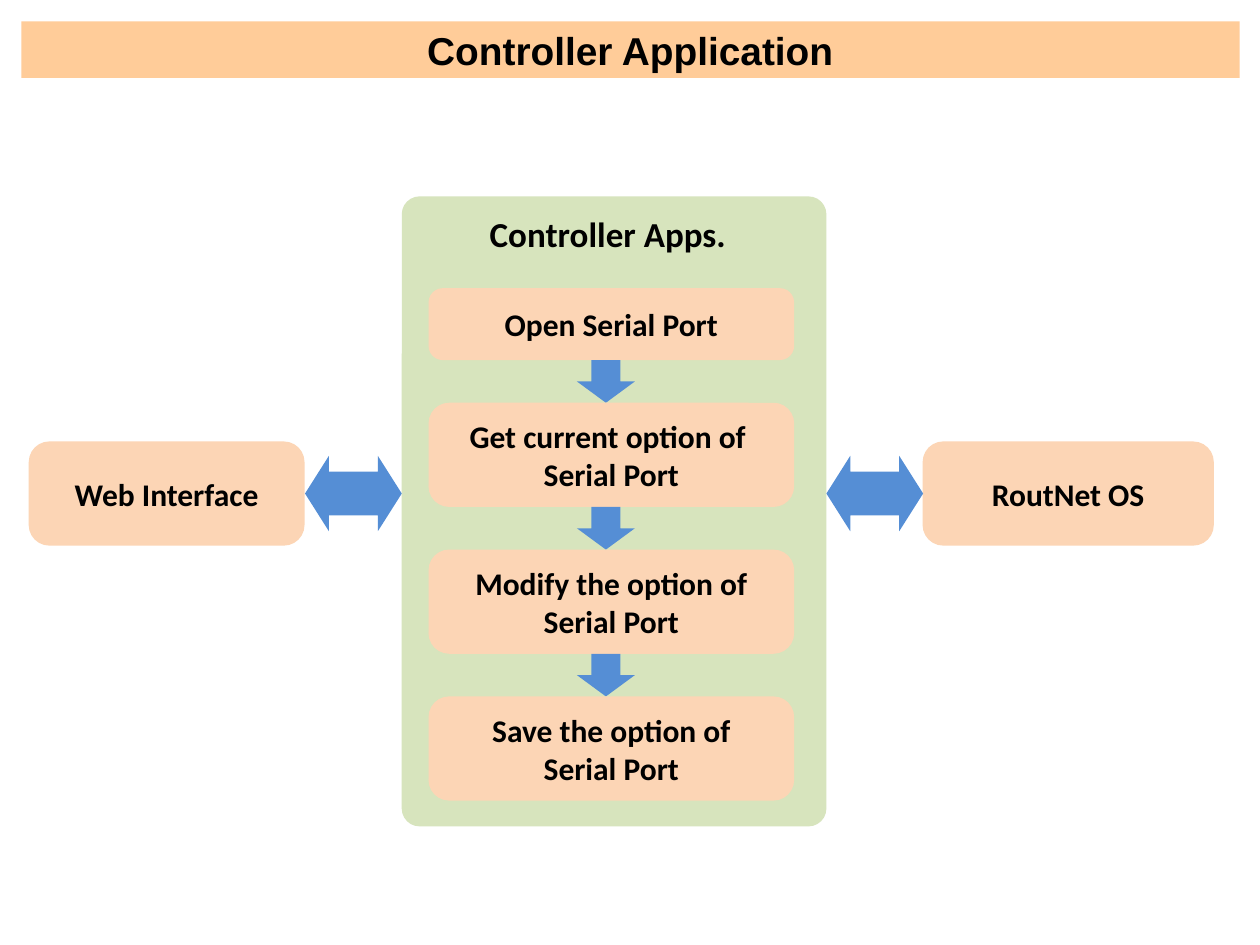
from dataclasses import dataclass

from pptx import Presentation
from pptx.dml.color import RGBColor
from pptx.enum.shapes import MSO_SHAPE as Shape
from pptx.enum.text import MSO_ANCHOR as Anchor, PP_ALIGN as Align
from pptx.util import Cm, Pt


@dataclass(frozen=True)
class Theme:
    banner: str = "FFCC99"
    panel: str = "D7E4BD"
    box: str = "FCD5B5"
    arrow: str = "558ED5"
    text: str = "000000"
    title_font: str = "Arial"
    body_font: str = "Calibri"
    title_size: float = 22.2
    heading_size: float = 20
    body_size: float = 18


@dataclass(frozen=True)
class Rect:
    """Position and size in centimetres."""
    x: float
    y: float
    w: float
    h: float

    @property
    def lengths(self) -> tuple:
        return Cm(self.x), Cm(self.y), Cm(self.w), Cm(self.h)


@dataclass(frozen=True)
class Step:
    lines: tuple[str, ...]
    height: float


THEME = Theme()
BOX_ROUNDING = 0.198
BOX_H = 2.1
PANEL = Rect(8.1, 3.96, 8.56, 12.7)

STEP_X, STEP_TOP, STEP_W, STEP_GAP = 8.64, 5.81, 7.37, 0.86
STEPS = (
    Step(("Open Serial Port",), 1.45),
    Step(("Get current option of ", "Serial Port"), BOX_H),
    Step(("Modify the option of", "Serial Port"), BOX_H),
    Step(("Save the option of", "Serial Port"), BOX_H),
)
DOWN_X, DOWN_W = 11.63, 1.17

SIDE_Y = 8.9
SIDE_BOXES = (
    ("Web Interface", Rect(0.58, SIDE_Y, 5.56, BOX_H)),
    ("RoutNet OS", Rect(18.6, SIDE_Y, 5.87, BOX_H)),
)
LINK_W, LINK_H = 1.95, 1.52


def add_block(s, kind: Shape, rect: Rect, color: str, *adjustments: float):
    """Add a flat, borderless preset shape."""
    sp = s.shapes.add_shape(kind, *rect.lengths)
    sp.shadow.inherit = False
    sp.fill.solid()
    sp.fill.fore_color.rgb = RGBColor.from_string(color)
    sp.line.fill.background()
    for i, value in enumerate(adjustments):
        sp.adjustments[i] = value
    return sp


def write_lines(sp, lines: tuple[str, ...], size: float = THEME.body_size,
                font: str = THEME.body_font) -> None:
    """Write one centred bold paragraph per line."""
    tf = sp.text_frame
    tf.word_wrap = True
    tf.vertical_anchor = Anchor.MIDDLE
    for i, line in enumerate(lines):
        p = tf.add_paragraph() if i else tf.paragraphs[0]
        p.alignment = Align.CENTER
        r = p.add_run()
        r.text = line
        r.font.name = font
        r.font.size = Pt(size)
        r.font.bold = True
        r.font.color.rgb = RGBColor.from_string(THEME.text)


def add_box(s, rect: Rect, lines: tuple[str, ...]) -> None:
    sp = add_block(s, Shape.ROUNDED_RECTANGLE, rect, THEME.box, BOX_ROUNDING)
    write_lines(sp, lines)


def add_steps(s) -> None:
    """Stack the steps, with a down arrow filling each gap."""
    y = STEP_TOP
    for i, step in enumerate(STEPS):
        if i:
            add_block(s, Shape.DOWN_ARROW,
                      Rect(DOWN_X, y, DOWN_W, STEP_GAP), THEME.arrow)
            y += STEP_GAP
        add_box(s, Rect(STEP_X, y, STEP_W, step.height), step.lines)
        y += step.height


def add_links(s) -> None:
    """Join the panel to the side boxes with two-way arrows."""
    y = SIDE_Y + (BOX_H - LINK_H) / 2
    for x in (PANEL.x - LINK_W, PANEL.x + PANEL.w):
        add_block(s, Shape.LEFT_RIGHT_ARROW, Rect(x, y, LINK_W, LINK_H),
                  THEME.arrow, 0.579, 0.317)


def main() -> None:
    prs = Presentation()
    prs.slide_width, prs.slide_height = Cm(25.4), Cm(19.05)
    s = prs.slides.add_slide(prs.slide_layouts[6])

    banner = add_block(s, Shape.RECTANGLE, Rect(0.43, 0.43, 24.56, 1.14), THEME.banner)
    write_lines(banner, ("Controller Application",), THEME.title_size, THEME.title_font)

    add_block(s, Shape.ROUNDED_RECTANGLE, PANEL, THEME.panel, 0.042)
    heading = s.shapes.add_textbox(*Rect(9.04, 4.11, 6.43, 1.19).lengths)
    write_lines(heading, ("Controller Apps.",), THEME.heading_size)

    add_steps(s)
    for label, rect in SIDE_BOXES:
        add_box(s, rect, (label,))
    add_links(s)

    prs.save("out.pptx")


if __name__ == "__main__":
    main()
